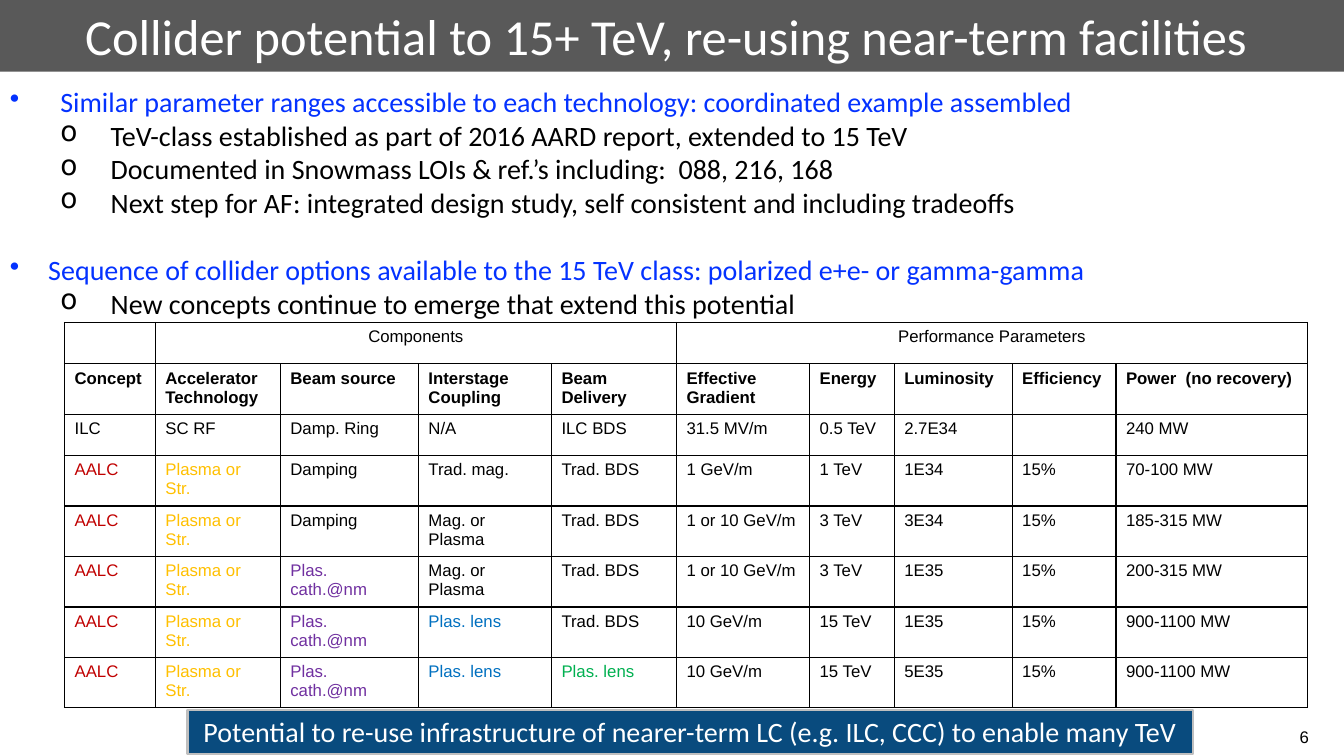
from pptx import Presentation
from pptx import util as u
from pptx.dml.color import RGBColor
from pptx.enum import shapes, text
from pptx.oxml import parse_xml
from pptx.oxml.ns import nsdecls

W, H = 13.33, 7.5
COLORS = {
    "band": "595959", "white": "FFFFFF", "black": "000000",
    "topic": "0432FF", "callout": "094B7E", "edge": "BFBFBF",
    "red": "C00000", "gold": "FFC000", "purple": "7030A0",
    "blue": "0070C0", "green": "00B050",
}

# (level, left margin and hanging indent, points before, text)
POINTS = [
    (0, 0.5, 0.5, 0, "Similar parameter ranges accessible to each technology: "
                     "coordinated example assembled"),
    (1, 1, 0.5, 0, "TeV-class established as part of 2016 AARD report, extended to 15 TeV"),
    (1, 1, 0.5, 0, "Documented in Snowmass LOIs & ref.’s including:  088, 216, 168"),
    (1, 1, 0.5, 0, "Next step for AF: integrated design study, self consistent "
                   "and including tradeoffs"),
    (0, 0.38, 0.38, 24, "Sequence of collider options available to the 15 TeV class: "
                        "polarized e+e- or gamma-gamma"),
    (1, 1, 0.5, 0, "New concepts continue to emerge that extend this potential"),
]

GROUPS = {"Components": (1, 4), "Performance Parameters": (5, 9)}
CONCEPTS = [
    ["Concept", "Accelerator Technology", "Beam source", "Interstage Coupling",
     "Beam Delivery", "Effective Gradient", "Energy", "Luminosity", "Efficiency",
     "Power  (no recovery)"],
    ["ILC", "SC RF", "Damp. Ring", "N/A", "ILC BDS", "31.5 MV/m", "0.5 TeV",
     "2.7E34", "", "240 MW"],
    ["AALC", "Plasma or Str.", "Damping", "Trad. mag.", "Trad. BDS", "1 GeV/m",
     "1 TeV", "1E34", "15%", "70-100 MW"],
    ["AALC", "Plasma or Str.", "Damping", "Mag. or Plasma", "Trad. BDS",
     "1 or 10 GeV/m", "3 TeV", "3E34", "15%", "185-315 MW"],
    ["AALC", "Plasma or Str.", "Plas. cath.@nm", "Mag. or Plasma", "Trad. BDS",
     "1 or 10 GeV/m", "3 TeV", "1E35", "15%", "200-315 MW"],
    ["AALC", "Plasma or Str.", "Plas. cath.@nm", "Plas. lens", "Trad. BDS",
     "10 GeV/m", "15 TeV", "1E35", "15%", "900-1100 MW"],
    ["AALC", "Plasma or Str.", "Plas. cath.@nm", "Plas. lens", "Plas. lens",
     "10 GeV/m", "15 TeV", "5E35", "15%", "900-1100 MW"],
]
COL_WIDTHS = [0.9, 1.24, 1.37, 1.32, 1.24, 1.32, 0.84, 1.17, 1.03, 1.9]
ROW_HEIGHTS = [0.41, 0.5, 0.41] + [0.5] * 5
ACCENTS = ["red", "gold", "purple", "blue", "green"]  # new technology, by column


def rgb(name):
    return RGBColor.from_string(COLORS[name])


def inches(box):
    return [u.Inches(v) for v in box]


def write(p, words, size, font, color="black", bold=False, align=text.PP_ALIGN.LEFT):
    p.alignment = align
    r = p.add_run()
    r.text = words
    r.font.size, r.font.name, r.font.bold = u.Pt(size), font, bold
    r.font.color.rgb = rgb(color)


def add_title(s, box):
    sp = s.shapes.title
    sp.left, sp.top, sp.width, sp.height = inches(box)
    sp.fill.solid()
    sp.fill.fore_color.rgb = rgb("band")
    tf = sp.text_frame
    tf.auto_size = text.MSO_AUTO_SIZE.NONE
    tf.vertical_anchor = text.MSO_ANCHOR.MIDDLE
    write(tf.paragraphs[0], "Collider potential to 15+ TeV, re-using near-term facilities ",
          36, "Calibri", "white", align=text.PP_ALIGN.CENTER)


def set_bullet(p, char, color, margin, hang):
    pPr = p._p.get_or_add_pPr()
    pPr.set("marL", str(u.Inches(margin)))
    pPr.set("indent", str(-u.Inches(hang)))
    pPr.append(parse_xml(f'<a:buClr {nsdecls("a")}><a:srgbClr val="{COLORS[color]}"/></a:buClr>'))
    pPr.append(parse_xml(f'<a:buChar {nsdecls("a")} char="{char}"/>'))


def add_points(s, box):
    tf = s.shapes.add_textbox(*inches(box)).text_frame
    tf.word_wrap = True
    for i, (level, margin, hang, before, words) in enumerate(POINTS):
        p = tf.add_paragraph() if i else tf.paragraphs[0]
        color = "black" if level else "topic"
        p.level = level
        p.space_before = u.Pt(before)
        write(p, words, 20, "Calibri", color)
        set_bullet(p, "o" if level else "•", color, margin, hang)


def set_borders(cell):
    tcPr = cell._tc.get_or_add_tcPr()
    for i, side in enumerate(("lnL", "lnR", "lnT", "lnB")):
        tcPr.insert(i, parse_xml(
            f'<a:{side} {nsdecls("a")} w="12700"><a:solidFill>'
            f'<a:srgbClr val="{COLORS["black"]}"/></a:solidFill></a:{side}>'))


def add_concepts(s, left, top):
    box = inches((left, top, sum(COL_WIDTHS), sum(ROW_HEIGHTS)))
    table = s.shapes.add_table(len(ROW_HEIGHTS), len(COL_WIDTHS), *box).table
    table.first_row = table.horz_banding = False
    for col, width in zip(table.columns, COL_WIDTHS):
        col.width = u.Inches(width)
    for row, height in zip(table.rows, ROW_HEIGHTS):
        row.height = u.Inches(height)
    for cell in table.iter_cells():
        cell.fill.background()
        set_borders(cell)
    for name, (first, last) in GROUPS.items():
        cell = table.cell(0, first)
        cell.merge(table.cell(0, last))
        write(cell.text_frame.paragraphs[0], name, 12, "Arial", align=text.PP_ALIGN.CENTER)
    for i, values in enumerate(CONCEPTS, 1):
        for j, value in enumerate(values):
            if value:
                color = ACCENTS[j] if value.startswith(("AALC", "Plas")) else "black"
                p = table.cell(i, j).text_frame.paragraphs[0]
                write(p, value, 12, "Arial", color, bold=i == 1)


def add_callout(s, box):
    sp = s.shapes.add_shape(shapes.MSO_SHAPE.RECTANGLE, *inches(box))
    sp.shadow.inherit = False
    sp.fill.solid()
    sp.fill.fore_color.rgb = rgb("callout")
    sp.line.color.rgb = rgb("edge")
    sp.line.width = u.Pt(1.5)
    tf = sp.text_frame
    tf.vertical_anchor = text.MSO_ANCHOR.TOP
    write(tf.paragraphs[0], "Potential to re-use infrastructure of nearer-term LC "
          "(e.g. ILC, CCC) to enable many TeV", 20, "Calibri", "white",
          align=text.PP_ALIGN.CENTER)


def add_page_number(s, box):
    tf = s.shapes.add_textbox(*inches(box)).text_frame
    tf.word_wrap = True
    tf.vertical_anchor = text.MSO_ANCHOR.MIDDLE
    write(tf.paragraphs[0], "6", 12, "Arial", align=text.PP_ALIGN.CENTER)


def main():
    prs = Presentation()
    prs.slide_width, prs.slide_height = u.Inches(W), u.Inches(H)
    s = prs.slides.add_slide(prs.slide_layouts[5])
    add_title(s, (0, 0, W, 0.71))
    add_page_number(s, (W - 0.77, H - 0.36, 0.75, 0.33))
    add_callout(s, (1.86, H - 0.46, 9.97, 0.44))
    add_points(s, (0, 0.79, 12.7, 3.13))
    add_concepts(s, 0.64, 3.2)
    prs.save("out.pptx")


if __name__ == "__main__":
    main()
